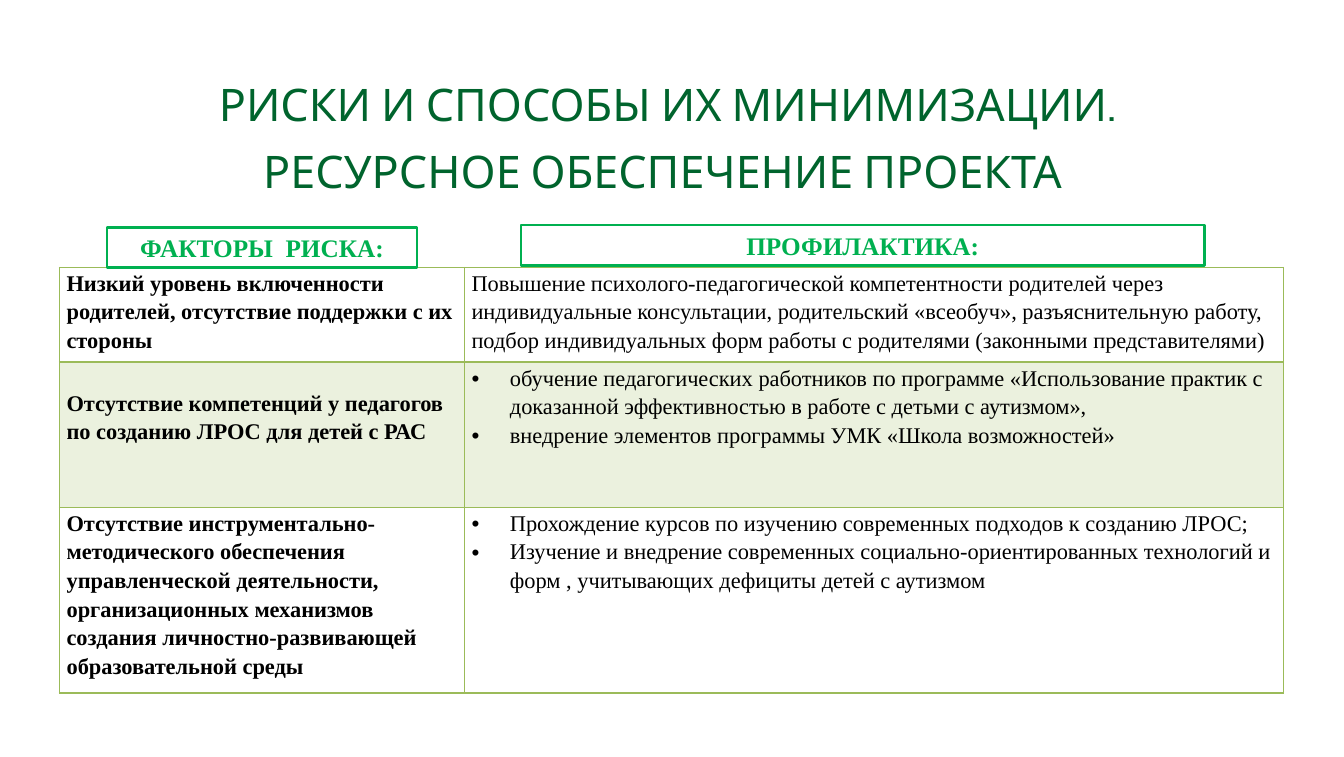
from pptx import Presentation
from pptx import util as u
from pptx.dml.color import RGBColor
from pptx.enum import shapes, text
from pptx.oxml import parse_xml
from pptx.oxml.ns import nsdecls

HUES = {"title": "00642D", "tag": "00B050", "rule": "9BBB59",
        "band": "EBF1DE", "plain": "FFFFFF", "ink": "000000"}

FONTS = {
    "title": {"name": "Cabin", "size": u.Pt(32), "bold": False},
    "tag": {"name": "Times New Roman", "size": u.Pt(18), "bold": True},
    "risk": {"name": "Times New Roman", "size": u.Pt(16), "bold": True},
    "care": {"name": "Times New Roman", "size": u.Pt(16), "bold": False},
}

TITLE = ["РИСКИ И СПОСОБЫ ИХ МИНИМИЗАЦИИ.", "РЕСУРСНОЕ ОБЕСПЕЧЕНИЕ ПРОЕКТА "]

TAGS = [("ФАКТОРЫ  РИСКА:", (7.96, 30, 23.07, 5.33)),
        ("ПРОФИЛАКТИКА:", (38.77, 29.73, 50.86, 5.33))]

RISKS = [
    {"high": 12.53, "fill": "plain", "edge": 2, "drop": 0,
     "risk": "Низкий уровень включенности родителей, отсутствие поддержки с их стороны",
     "care": ["Повышение психолого-педагогической компетентности родителей через "
              "индивидуальные консультации, родительский «всеобуч», разъяснительную работу, "
              "подбор индивидуальных форм работы с родителями (законными представителями)"]},
    {"high": 19.2, "fill": "band", "edge": 1, "drop": 0.25,
     "risk": "Отсутствие компетенций у педагогов по созданию ЛРОС для детей с РАС",
     "care": ["обучение педагогических работников по программе «Использование практик с "
              "доказанной эффективностью в работе с детьми с аутизмом»,",
              "внедрение элементов программы УМК «Школа возможностей»"]},
    {"high": 24.5, "fill": "plain", "edge": 1, "drop": 0,
     "risk": "Отсутствие инструментально-методического обеспечения управленческой "
             "деятельности, организационных механизмов создания личностно-развивающей "
             "образовательной среды",
     "care": ["Прохождение курсов по изучению современных подходов к созданию ЛРОС;",
              "Изучение и внедрение современных социально-ориентированных технологий и "
              "форм , учитывающих дефициты детей с аутизмом"]},
]


def put(item, form):
    for name, value in form.items():
        setattr(item, name, value)


def hue(name):
    return RGBColor.from_string(HUES[name])


class Deck:
    """Holds the style and the current slide on a grid of 100 columns by 100 rows."""

    def __init__(self):
        self.show = Presentation()
        put(self.show, {"slide_width": u.Inches(13.31), "slide_height": u.Inches(7.5)})
        self.slide = self.show.slides.add_slide(self.show.slide_layouts[5])

    def wide(self, cols):
        return round(self.show.slide_width * cols / 100)

    def high(self, rows):
        return round(self.show.slide_height * rows / 100)

    def area(self, box):
        left, top, width, height = box
        return self.wide(left), self.high(top), self.wide(width), self.high(height)

    def words(self, frame, lines, font, ink, form, gap=0, dots=False):
        frame.text = "\n".join(lines)
        for index, para in enumerate(frame.paragraphs):
            if dots:
                self.dot(para)
            put(para, form)
            if index:
                para.space_before = u.Pt(gap)
            put(para.font, FONTS[font])
            para.font.color.rgb = hue(ink)

    def dot(self, para):
        props = para._p.get_or_add_pPr()
        props.set("marL", str(u.Inches(0.38)))
        props.set("indent", str(-u.Inches(0.38)))
        props.append(parse_xml(f'<a:buFont {nsdecls("a")} typeface="Arial"/>'))
        props.append(parse_xml(f'<a:buChar {nsdecls("a")} char="•"/>'))

    def title(self, lines, box):
        head = self.slide.shapes.title
        put(head, dict(zip(("left", "top", "width", "height"), self.area(box))))
        put(head.text_frame, {
            "margin_left": 0, "margin_top": 0, "margin_right": 0, "margin_bottom": 0,
            "word_wrap": True, "auto_size": text.MSO_AUTO_SIZE.NONE,
            "vertical_anchor": text.MSO_ANCHOR.TOP})
        self.words(head.text_frame, lines, "title", "title",
                   {"alignment": text.PP_ALIGN.CENTER, "line_spacing": 0.9}, gap=13.3)

    def tag(self, label, box):
        rect = self.slide.shapes.add_shape(shapes.MSO_SHAPE.RECTANGLE, *self.area(box))
        rect.shadow.inherit = False
        rect.fill.solid()
        rect.fill.fore_color.rgb = hue("plain")
        rect.line.color.rgb = hue("tag")
        rect.line.width = u.Pt(2)
        put(rect.text_frame, {"word_wrap": True, "vertical_anchor": text.MSO_ANCHOR.MIDDLE})
        self.words(rect.text_frame, [label], "tag", "tag",
                   {"alignment": text.PP_ALIGN.CENTER})

    def edges(self, cell, sizes):
        props = cell._tc.get_or_add_tcPr()
        for side, size in zip("LRTB", sizes):
            props.append(parse_xml(
                f'<a:ln{side} {nsdecls("a")} w="{u.Pt(size)}"><a:solidFill>'
                f'<a:srgbClr val="{HUES["rule"]}"/></a:solidFill></a:ln{side}>'))

    def cell(self, cell, lines, font, fill, sizes, drop=0):
        self.edges(cell, sizes)
        put(cell, {"margin_left": u.Inches(0.07), "margin_right": u.Inches(0.07),
                   "margin_top": u.Inches(drop), "margin_bottom": 0})
        cell.fill.solid()
        cell.fill.fore_color.rgb = hue(fill)
        self.words(cell.text_frame, lines, font, "ink", {"line_spacing": 1.15},
                   dots=len(lines) > 1)

    def table(self, rows, cols, left, top):
        box = left, top, sum(cols), sum(row["high"] for row in rows)
        grid = self.slide.shapes.add_table(len(rows), len(cols), *self.area(box)).table
        put(grid, {"first_row": False, "horz_banding": False})
        for col, width in zip(grid.columns, cols):
            col.width = self.wide(width)
        above = 1
        for index, row in enumerate(rows):
            grid.rows[index].height = self.high(row["high"])
            sizes = 1, 1, above, row["edge"]
            self.cell(grid.cell(index, 0), [row["risk"]], "risk", row["fill"], sizes, row["drop"])
            self.cell(grid.cell(index, 1), row["care"], "care", row["fill"], sizes)
            above = row["edge"]


def main():
    deck = Deck()
    deck.title(TITLE, (3.83, 10.93, 91.74, 15.33))
    deck.table(RISKS, (30.13, 60.93), 4.43, 35.33)
    for label, box in TAGS:
        deck.tag(label, box)
    deck.show.save("out.pptx")


if __name__ == "__main__":
    main()
